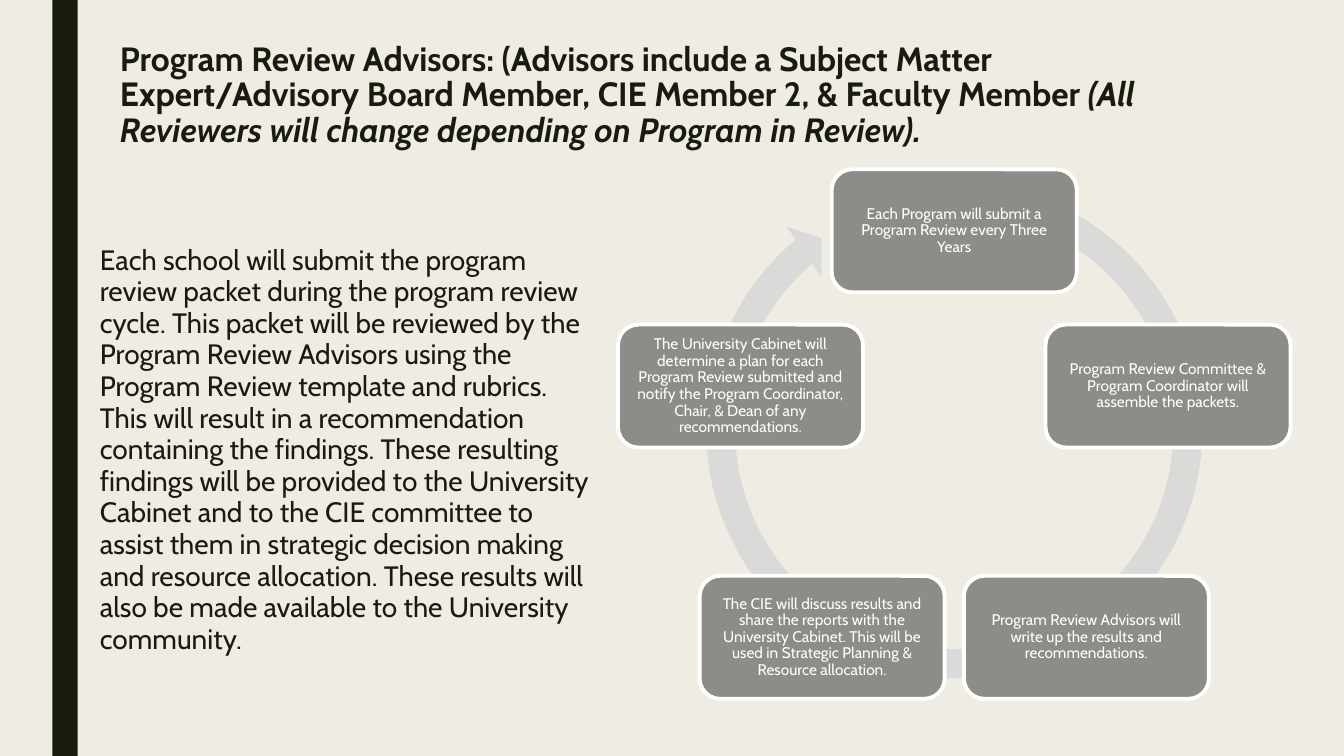
from math import cos, radians, sin

from lxml.etree import SubElement
from pptx import Presentation
from pptx.dml.color import RGBColor
from pptx.enum.shapes import MSO_SHAPE
from pptx.enum.text import MSO_ANCHOR, MSO_AUTO_SIZE, PP_ALIGN
from pptx.oxml.ns import qn
from pptx.util import Inches, Pt

COLORS = {
    "background": "EFEDE3",
    "dark": "191B0E",
    "ring": "DADBD9",
    "step": "8C8D86",
    "white": "FFFFFF",
}
FONT = "Cabin"

TITLE = ("Program Review Advisors: (Advisors include a Subject Matter "
         "Expert/Advisory Board Member, CIE Member 2, & Faculty Member ")
TITLE_NOTE = "(All Reviewers will change depending on Program in Review)."
SUMMARY = (
    "Each school will submit the program review packet during the program "
    "review cycle. This packet will be reviewed by the Program Review Advisors "
    "using the Program Review template and rubrics. This will result in a "
    "recommendation containing the findings. These resulting findings will be "
    "provided to the University Cabinet and to the CIE committee to assist them "
    "in strategic decision making and resource allocation. These results will "
    "also be made available to the University community."
)
# Clockwise from the top
STEPS = [
    "Each Program will submit a Program Review every Three Years",
    "Program Review Committee & Program Coordinator will assemble the packets.",
    "Program Review Advisors will write up the results and recommendations.",
    "The CIE will discuss results and share the reports with the University "
    "Cabinet. This will be used in Strategic Planning & Resource allocation.",
    "The University Cabinet will determine a plan for each Program Review "
    "submitted and notify the Program Coordinator, Chair, & Dean of any "
    "recommendations.",
]


def color(name):
    return RGBColor.from_string(COLORS[name])


def add_text(paragraph, text, size, fill="dark", bold=False, italic=False):
    run = paragraph.add_run()
    run.text = text
    font = run.font
    font.name, font.size = FONT, Pt(size)
    font.bold, font.italic = bold, italic
    font.color.rgb = color(fill)


def add_block(slide, kind, left, top, width, height, fill):
    block = slide.shapes.add_shape(
        kind, Inches(left), Inches(top), Inches(width), Inches(height))
    block.shadow.inherit = False
    block.fill.solid()
    block.fill.fore_color.rgb = color(fill)
    block.line.fill.background()
    return block


def prepare_placeholder(holder, left, top, width, height, line_spacing):
    """Move a placeholder and return its first paragraph."""
    holder.left, holder.top = Inches(left), Inches(top)
    holder.width, holder.height = Inches(width), Inches(height)
    frame = holder.text_frame
    frame.auto_size = MSO_AUTO_SIZE.NONE
    frame.vertical_anchor = MSO_ANCHOR.TOP
    paragraph = frame.paragraphs[0]
    paragraph.alignment = PP_ALIGN.LEFT
    paragraph.line_spacing = line_spacing
    return paragraph


def build_title(slide, left, top, width, height):
    heading = prepare_placeholder(
        slide.shapes.title, left, top, width, height, 0.89)
    add_text(heading, TITLE, 24, bold=True)
    add_text(heading, TITLE_NOTE, 24, bold=True, italic=True)


def build_summary(slide, left, top, width, height):
    summary = prepare_placeholder(
        slide.placeholders[1], left, top, width, height, 0.94)
    summary.space_before, summary.space_after = Pt(10), Pt(2)
    # Plain paragraph without bullet or indent
    properties = summary._p.get_or_add_pPr()
    properties.set("marL", "0")
    properties.set("indent", "0")
    SubElement(properties, qn("a:buNone"))
    add_text(summary, SUMMARY, 20)


def build_step(slide, text, left, top, width, height):
    step = add_block(slide, MSO_SHAPE.ROUNDED_RECTANGLE,
                     left, top, width, height, "step")
    step.line.color.rgb = color("white")
    step.line.width = Pt(2.75)
    frame = step.text_frame
    frame.word_wrap = True
    frame.vertical_anchor = MSO_ANCHOR.MIDDLE
    frame.margin_left = frame.margin_right = Inches(0.05)
    frame.margin_top = frame.margin_bottom = Inches(0.05)
    paragraph = frame.paragraphs[0]
    paragraph.alignment = PP_ALIGN.CENTER
    paragraph.line_spacing = 0.9
    add_text(paragraph, text, 11, fill="white")


def build_cycle(slide, left, top, width, height):
    step_width, step_height, ring_size = 2.43, 1.22, 5.24
    center_x = left + width / 2
    radius = (width - step_width) / 2 / sin(radians(72))
    center_y = top + step_height / 2 + radius

    # Ring with its arrowhead before the first step
    ring = add_block(slide, MSO_SHAPE.CIRCULAR_ARROW, center_x - ring_size / 2,
                     top - 0.03, ring_size, ring_size, "ring")
    for index, value in enumerate((0.055, 3.307, 137.952, 173.743, 0.058)):
        ring.adjustments[index] = value

    # Steps at equal angles
    for index, text in enumerate(STEPS):
        angle = radians(index * 360 / len(STEPS))
        build_step(slide, text,
                   center_x + radius * sin(angle) - step_width / 2,
                   center_y - radius * cos(angle) - step_height / 2,
                   step_width, step_height)


def main():
    deck = Presentation()
    deck.slide_width, deck.slide_height = Inches(13.33), Inches(7.5)
    slide = deck.slides.add_slide(deck.slide_layouts[1])
    slide.background.fill.solid()
    slide.background.fill.fore_color.rgb = color("background")

    add_block(slide, MSO_SHAPE.RECTANGLE, 0.52, 0, 0.25, 7.5, "dark")
    build_title(slide, 1.09, 0.37, 10.5, 1.62)
    build_summary(slide, 0.89, 2.38, 5.15, 4.64)
    build_cycle(slide, 6.13, 1.68, 6.67, 5.26)
    deck.save("out.pptx")


if __name__ == "__main__":
    main()
